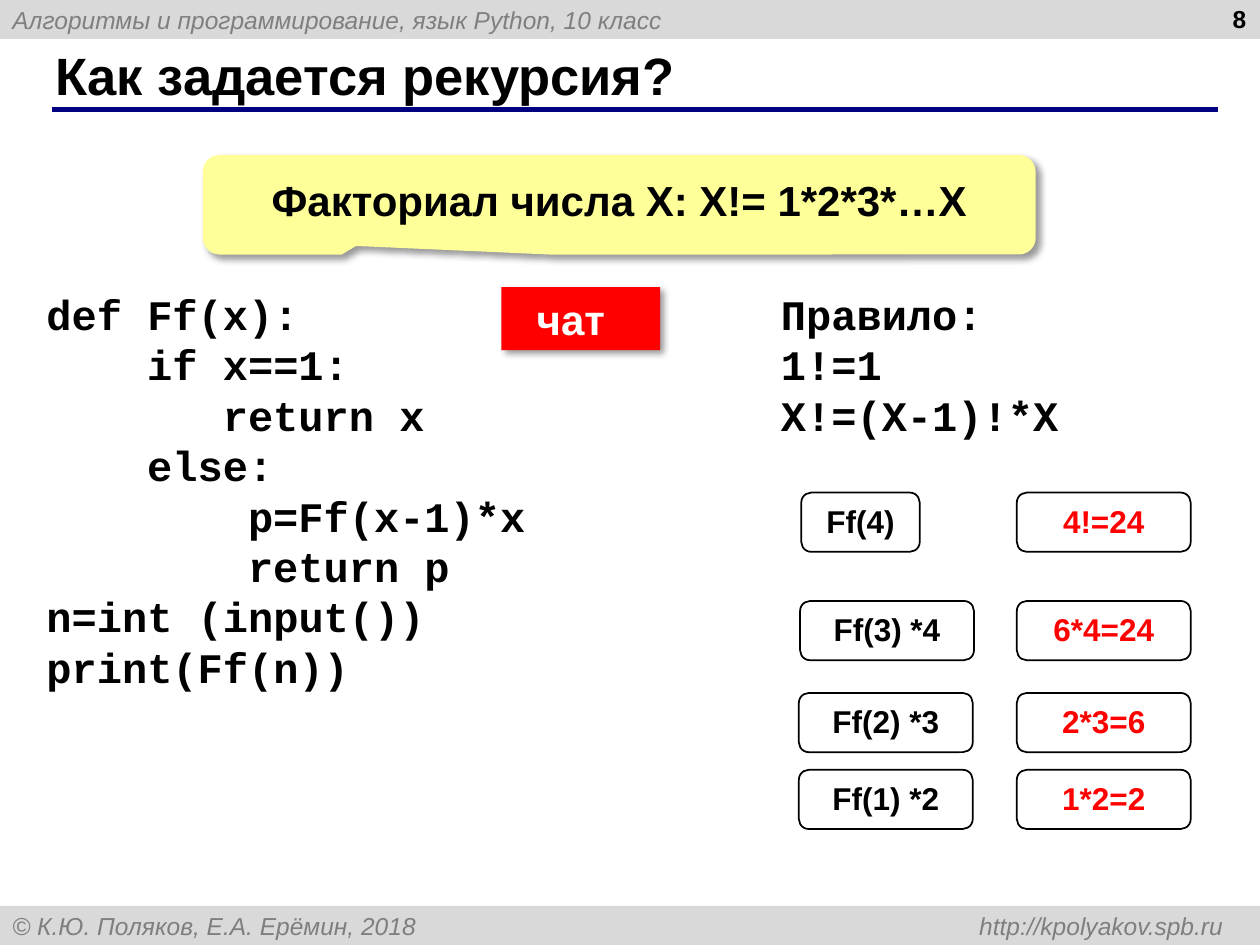
from lxml import etree
from pptx import Presentation
from pptx.dml.color import RGBColor
from pptx.enum.shapes import MSO_CONNECTOR, MSO_SHAPE
from pptx.enum.text import MSO_ANCHOR, PP_ALIGN
from pptx.oxml import parse_xml
from pptx.oxml.ns import nsdecls, qn
from pptx.util import Inches, Pt

BLACK = RGBColor(0x00, 0x00, 0x00)
WHITE = RGBColor(0xFF, 0xFF, 0xFF)
RED = RGBColor(0xFF, 0x00, 0x00)
NAVY = RGBColor(0x00, 0x00, 0x80)
YELLOW = RGBColor(0xFF, 0xFF, 0x99)
BAND = RGBColor(0xD9, 0xD9, 0xD9)
GREY = RGBColor(0x7F, 0x7F, 0x7F)

SHADOW = (
    f'<a:effectLst {nsdecls("a")}>'
    '<a:outerShdw blurRad="50800" dist="38100" dir="2700000" algn="tl" rotWithShape="0">'
    '<a:srgbClr val="000000"><a:alpha val="40000"/></a:srgbClr>'
    '</a:outerShdw></a:effectLst>'
)

prs = Presentation()
prs.slide_width, prs.slide_height = Inches(10), Inches(7.5)
s = prs.slides.add_slide(prs.slide_layouts[6])


def add_text(sp, lines, size, color=BLACK, font="Arial", align=PP_ALIGN.LEFT,
             anchor=MSO_ANCHOR.TOP, bold=True, italic=False):
    """Fill a shape with one paragraph per line and return its text frame."""
    tf = sp.text_frame
    tf.word_wrap = True
    tf.vertical_anchor = anchor
    style = {"name": font, "size": Pt(size), "bold": bold, "italic": italic}
    for i, line in enumerate(lines):
        p = tf.paragraphs[0] if i == 0 else tf.add_paragraph()
        p.alignment = align
        r = p.add_run()
        r.text = line
        for key, value in style.items():
            setattr(r.font, key, value)
        r.font.color.rgb = color
    return tf


def add_box(kind, x, y, w, h, fill=None, line=None, shadow=False):
    sp = s.shapes.add_shape(kind, Inches(x), Inches(y), Inches(w), Inches(h))
    sp.shadow.inherit = False
    if fill is None:
        sp.fill.background()
    else:
        sp.fill.solid()
        sp.fill.fore_color.rgb = fill
    if line is None:
        sp.line.fill.background()
    else:
        sp.line.color.rgb = line
        sp.line.width = Pt(1)
    if shadow:
        effects = sp._element.spPr.find(qn("a:effectLst"))
        effects.getparent().replace(effects, parse_xml(SHADOW))
    return sp


# Header and footer bands
bands = [
    (0, "Алгоритмы и программирование, язык Python, 10 класс"),
    (7.19, "© К.Ю. Поляков, Е.А. Ерёмин, 2018 \thttp://kpolyakov.spb.ru"),
]
for y, text in bands:
    sp = add_box(MSO_SHAPE.RECTANGLE, 0, y, 10, 0.31, BAND)
    tf = add_text(sp, [text], 14, GREY, anchor=MSO_ANCHOR.MIDDLE, bold=False, italic=True)
tabs = etree.SubElement(tf.paragraphs[0]._p.get_or_add_pPr(), qn("a:tabLst"))
etree.SubElement(tabs, qn("a:tab"), pos=str(Inches(9.61)), algn="r")

# Title with its rule, and page number
rule = s.shapes.add_connector(MSO_CONNECTOR.STRAIGHT, Inches(0.41), Inches(0.87),
                              Inches(9.67), Inches(0.87))
rule.line.color.rgb = NAVY
rule.line.width = Pt(3)
etree.SubElement(rule._element.spPr, qn("a:effectLst"))
title = s.shapes.add_textbox(Inches(0.34), Inches(0.33), Inches(9.16), Inches(0.52))
add_text(title, ["Как задается рекурсия?"], 30, anchor=MSO_ANCHOR.MIDDLE)
number = s.shapes.add_textbox(Inches(7.66), Inches(-0.02), Inches(2.33), Inches(0.52))
add_text(number, ["8"], 14, align=PP_ALIGN.RIGHT)

# Definition callout
callout = add_box(MSO_SHAPE.ROUNDED_RECTANGULAR_CALLOUT, 1.61, 1.23, 6.61, 0.79,
                  YELLOW, shadow=True)
for i, value in enumerate((-0.316, 0.414, 0.167)):
    callout.adjustments[i] = value
tf = add_text(callout, ["Факториал числа Х: Х!= 1*2*3*…Х"], 24,
              align=PP_ALIGN.CENTER, anchor=MSO_ANCHOR.MIDDLE)
tf.margin_left = tf.margin_right = tf.margin_top = tf.margin_bottom = 0
tf.paragraphs[0].line_spacing = 0.8

# Chat label
chat = add_box(MSO_SHAPE.RECTANGLE, 3.98, 2.28, 1.26, 0.5, RED, shadow=True)
tf = add_text(chat, ["чат"], 24, WHITE, anchor=MSO_ANCHOR.MIDDLE)
tf.margin_left = Inches(0.28)

# Code: each line with its indent in characters, 0.2 inch per character
code = [
    (0, "def Ff(x):"),
    (4, "if x==1:"),
    (7, "return x"),
    (4, "else:"),
    (8, "p=Ff(x-1)*x"),
    (8, "return p"),
    (0, "n=int (input())"),
    (0, "print(Ff(n))"),
]
listing = s.shapes.add_textbox(Inches(0.27), Inches(2.24), Inches(5.59), Inches(3.74))
tf = add_text(listing, [text for _, text in code], 24, font="Courier New")
for p, (indent, _) in zip(tf.paragraphs, code):
    p._p.get_or_add_pPr().set("marL", str(Inches(0.2 * indent)))

rules = s.shapes.add_textbox(Inches(6.1), Inches(2.24), Inches(3.54), Inches(1.31))
add_text(rules, ["Правило:", "1!=1", "X!=(X-1)!*X"], 24, font="Courier New")

# Calls and the values they return
calls = [
    (3.91, 6.36, 0.94, "Ff(4)", "4!=24"),
    (4.77, 6.35, 1.38, "Ff(3) *4", "6*4=24"),
    (5.5, 6.34, 1.38, "Ff(2) *3", "2*3=6"),
    (6.11, 6.34, 1.38, "Ff(1) *2", "1*2=2"),
]
for y, x, w, call, result in calls:
    for left, width, text, color in ((x, w, call, BLACK), (8.07, 1.38, result, RED)):
        sp = add_box(MSO_SHAPE.ROUNDED_RECTANGLE, left, y, width, 0.47, line=BLACK)
        add_text(sp, [text], 18, color, align=PP_ALIGN.CENTER)

prs.save("out.pptx")
